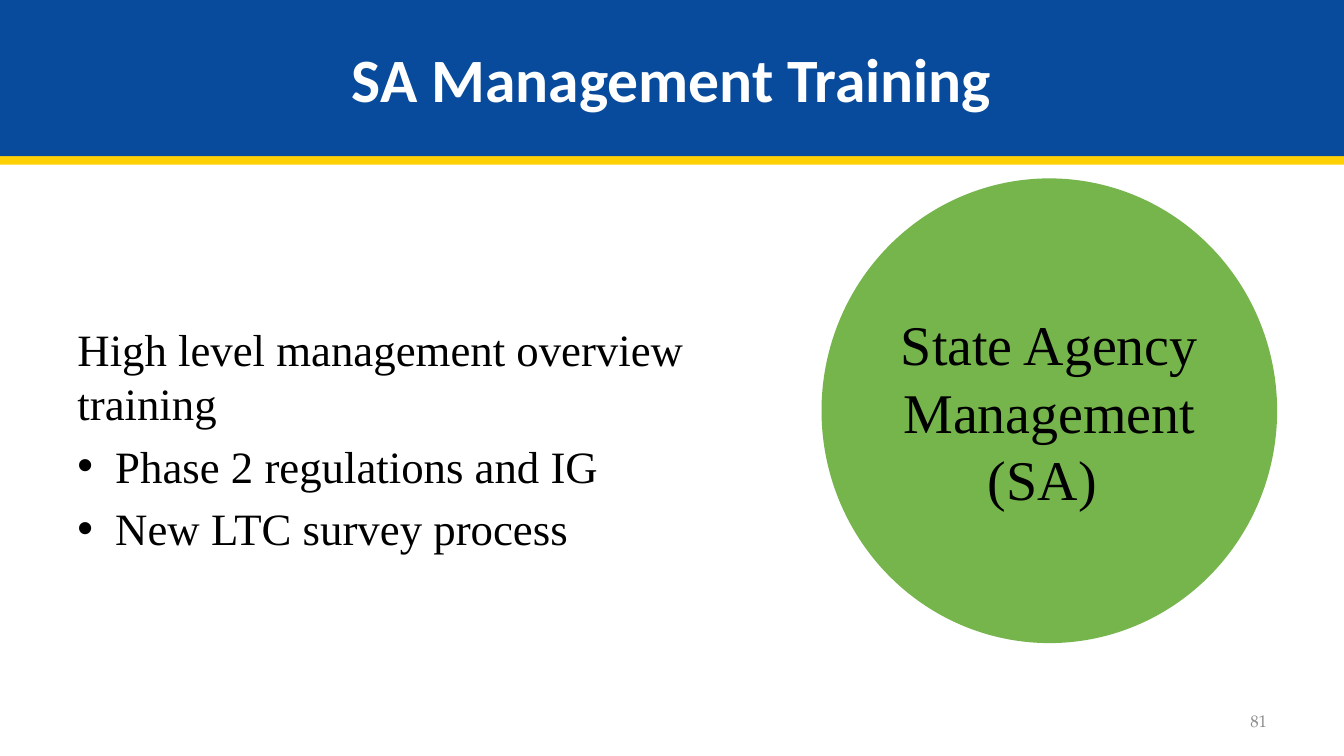
from dataclasses import dataclass

from lxml import etree
from pptx import Presentation
from pptx.dml.color import RGBColor
from pptx.enum.shapes import MSO_SHAPE
from pptx.enum.text import MSO_ANCHOR, MSO_AUTO_SIZE, PP_ALIGN
from pptx.oxml.ns import qn
from pptx.util import Pt

CIRCLE = MSO_SHAPE.FLOWCHART_CONNECTOR
MIDDLE = MSO_ANCHOR.MIDDLE
NO_AUTOFIT = MSO_AUTO_SIZE.NONE
LEFT, CENTER, RIGHT = PP_ALIGN.LEFT, PP_ALIGN.CENTER, PP_ALIGN.RIGHT
TITLE_ONLY = 5
SLIDE_WIDTH, SLIDE_HEIGHT = 960, 540


@dataclass(frozen=True)
class TextStyle:
    font: str
    size: float
    color: str
    bold: bool = False


@dataclass(frozen=True)
class Theme:
    banner: str = "084A9C"
    stripe: str = "FFD004"
    agency: str = "76B54C"
    title: TextStyle = TextStyle("Calibri", 44, "FFFFFF", True)
    body: TextStyle = TextStyle("Times New Roman", 32, "000000")
    circle: TextStyle = TextStyle("Times New Roman", 40, "000000")
    number: TextStyle = TextStyle("TeX Gyre Pagella", 12, "8C8C8C")


@dataclass(frozen=True)
class Box:
    left: float
    top: float
    width: float
    height: float

    def lengths(self) -> tuple:
        return Pt(self.left), Pt(self.top), Pt(self.width), Pt(self.height)


@dataclass(frozen=True)
class Line:
    text: str
    bulleted: bool = False


THEME = Theme()
BANNER = Box(0, 0, SLIDE_WIDTH, 111.6)
OVERVIEW = Box(48.24, 144, 520.56, 338.4)
AGENCY = Box(586.8, 127.44, 325.44, 331.92)
NUMBER = Box(688.32, 500.4, 223.92, 28.8)
OVERVIEW_LINES = (
    Line("High level management overview training"),
    Line("Phase 2 regulations and IG", True),
    Line("New LTC survey process", True),
)
BULLET_INDENT = 27
PARAGRAPH_GAP = 6.4
STRIPE_HEIGHT = 6


def add_bullet(paragraph) -> None:
    properties = paragraph._p.get_or_add_pPr()
    properties.set("marL", str(Pt(BULLET_INDENT)))
    properties.set("indent", str(-Pt(BULLET_INDENT)))
    etree.SubElement(properties, qn("a:buFont"), typeface="Arial")
    etree.SubElement(properties, qn("a:buChar"), char="•")


def write(shape, lines: tuple[Line, ...], style: TextStyle, align) -> None:
    frame = shape.text_frame
    frame.word_wrap = True
    frame.auto_size = NO_AUTOFIT
    frame.vertical_anchor = MIDDLE
    for index, line in enumerate(lines):
        paragraph = frame.add_paragraph() if index else frame.paragraphs[0]
        paragraph.alignment = align
        if index:
            paragraph.space_before = Pt(PARAGRAPH_GAP)
        if line.bulleted:
            add_bullet(paragraph)
        run = paragraph.add_run()
        run.text = line.text
        run.font.name = style.font
        run.font.size = Pt(style.size)
        run.font.bold = style.bold
        run.font.color.rgb = RGBColor.from_string(style.color)


def fill_solid(shape, color: str) -> None:
    shape.fill.solid()
    shape.fill.fore_color.rgb = RGBColor.from_string(color)
    shape.line.fill.background()


def add_stripe(shape, color: str) -> None:
    """Give the shape a sharp shadow that shows as a stripe under it."""
    effects = etree.SubElement(shape._element.spPr, qn("a:effectLst"))
    shadow = etree.SubElement(
        effects, qn("a:outerShdw"), blurRad="0", dist=str(Pt(STRIPE_HEIGHT)),
        dir="5400000", algn="t", rotWithShape="0")
    etree.SubElement(shadow, qn("a:srgbClr"), val=color)


def add_text(slide, box: Box, lines: tuple[Line, ...], style: TextStyle, align) -> None:
    write(slide.shapes.add_textbox(*box.lengths()), lines, style, align)


def add_agency_circle(slide) -> None:
    circle = slide.shapes.add_shape(CIRCLE, *AGENCY.lengths())
    circle.shadow.inherit = False
    fill_solid(circle, THEME.agency)
    write(circle, (Line("State Agency Management (SA) "),), THEME.circle, CENTER)


def format_title(slide) -> None:
    title = slide.shapes.title
    title.left, title.top, title.width, title.height = BANNER.lengths()
    fill_solid(title, THEME.banner)
    add_stripe(title, THEME.stripe)
    write(title, (Line("SA Management Training"),), THEME.title, CENTER)


def main() -> None:
    presentation = Presentation()
    presentation.slide_width = Pt(SLIDE_WIDTH)
    presentation.slide_height = Pt(SLIDE_HEIGHT)
    slide = presentation.slides.add_slide(presentation.slide_layouts[TITLE_ONLY])
    format_title(slide)
    add_text(slide, OVERVIEW, OVERVIEW_LINES, THEME.body, LEFT)
    add_text(slide, NUMBER, (Line("81"),), THEME.number, RIGHT)
    add_agency_circle(slide)
    presentation.save("out.pptx")


if __name__ == "__main__":
    main()
